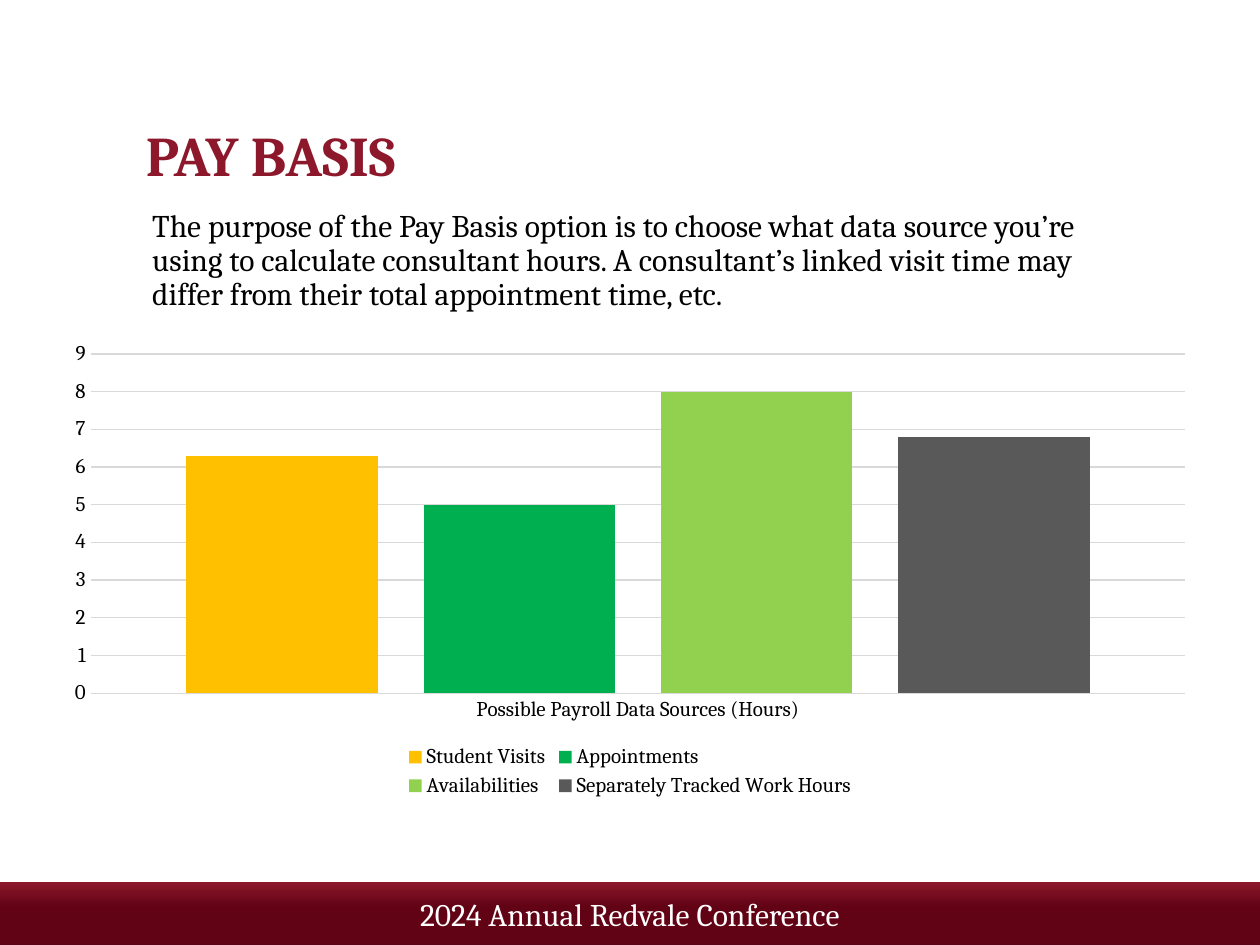
from dataclasses import dataclass

from pptx import Presentation
from pptx import util as u
from pptx.chart.data import CategoryChartData
from pptx.dml.color import RGBColor
from pptx.enum import chart as charts, shapes, text
from pptx.util import Cm


@dataclass(frozen=True)
class Theme:
    font: str = "Cambria"
    ink: str = "000000"
    white: str = "FFFFFF"
    crimson: str = "8D182B"
    maroon: str = "610215"
    grid: str = "D9D9D9"
    title_size: int = 32
    body_size: int = 18
    chart_size: int = 12


THEME = Theme()
SOURCES = [
    ("Student Visits", 6.3, "FFC000"),
    ("Appointments", 5, "00B050"),
    ("Availabilities", 8, "92D050"),
    ("Separately Tracked Work Hours", 6.8, "595959"),
]


def style_font(font, size, color, bold=False):
    font.name = THEME.font
    font.size = u.Pt(size)
    font.bold = bold
    font.color.rgb = RGBColor.from_string(color)


def add_text(page, words, left, top, width, height, *, size=THEME.body_size,
             color=THEME.ink, bold=False, align=text.PP_ALIGN.LEFT,
             anchor=text.MSO_ANCHOR.TOP, spacing=1.0, indent=0):
    box = page.shapes.add_textbox(Cm(left), Cm(top), Cm(width), Cm(height))
    frame = box.text_frame
    frame.word_wrap = True
    frame.vertical_anchor = anchor
    para = frame.paragraphs[0]
    para.alignment = align
    para.line_spacing = spacing
    if indent:
        para._p.get_or_add_pPr().set("marL", str(Cm(indent)))
    span = para.add_run()
    span.text = words
    style_font(span.font, size, color, bold)


def add_footer_band(page):
    band = page.shapes.add_shape(shapes.MSO_SHAPE.RECTANGLE,
                                 0, Cm(17.78), Cm(25.4), Cm(1.27))
    band.shadow.inherit = False
    band.line.fill.background()
    band.fill.gradient()
    band.fill.gradient_angle = 90
    stops = ((0.6, THEME.maroon), (1.0, THEME.crimson))
    for stop, (position, color) in zip(band.fill.gradient_stops, stops):
        stop.position = position
        stop.color.rgb = RGBColor.from_string(color)


def style_line(line, color):
    line.color.rgb = RGBColor.from_string(color)
    line.width = u.Pt(0.75)


def style_axes(chart):
    for axis in (chart.category_axis, chart.value_axis):
        axis.major_tick_mark = charts.XL_TICK_MARK.NONE
        axis.minor_tick_mark = charts.XL_TICK_MARK.NONE
        style_font(axis.tick_labels.font, THEME.chart_size, THEME.ink)
    style_line(chart.category_axis.format.line, THEME.grid)
    values = chart.value_axis
    values.minimum_scale, values.maximum_scale, values.major_unit = 0, 9, 1
    values.format.line.fill.background()
    values.has_major_gridlines = True
    style_line(values.major_gridlines.format.line, THEME.grid)


def add_hours_chart(page):
    data = CategoryChartData()
    data.categories = ["Possible Payroll Data Sources (Hours)"]
    for name, hours, _ in SOURCES:
        data.add_series(name, [hours])
    chart = page.shapes.add_chart(charts.XL_CHART_TYPE.COLUMN_CLUSTERED,
                                  Cm(1.04), Cm(6.71), Cm(23.32), Cm(9.47),
                                  data).chart
    style_font(chart.font, THEME.chart_size, THEME.ink)
    chart.has_title = False
    chart.has_legend = True
    chart.legend.position = charts.XL_LEGEND_POSITION.BOTTOM
    chart.legend.include_in_layout = False
    style_font(chart.legend.font, THEME.chart_size, THEME.ink)
    style_axes(chart)
    plot = chart.plots[0]
    plot.vary_by_categories = False
    plot.gap_width = 100
    plot.overlap = -24
    for series, (_, _, color) in zip(plot.series, SOURCES):
        series.format.fill.solid()
        series.format.fill.fore_color.rgb = RGBColor.from_string(color)


def main():
    deck = Presentation()
    deck.slide_width, deck.slide_height = Cm(25.4), Cm(19.05)
    page = deck.slides.add_slide(deck.slide_layouts[6])
    add_footer_band(page)
    add_text(page, "2024 Annual Redvale Conference", 6.35, 17.91, 12.7, 1.02,
             color=THEME.white, align=text.PP_ALIGN.CENTER)
    add_text(page, "PAY BASIS", 2.69, 2.13, 20.02, 1.8, size=THEME.title_size,
             color=THEME.crimson, bold=True, anchor=text.MSO_ANCHOR.BOTTOM,
             spacing=0.9)
    add_hours_chart(page)
    add_text(page, "The purpose of the Pay Basis option is to choose what data "
             "source you’re using to calculate consultant hours. A consultant’s "
             "linked visit time may differ from their total appointment time, etc.",
             2.69, 4.11, 20.02, 13.49, spacing=0.9, indent=0.13)
    deck.save("out.pptx")


if __name__ == "__main__":
    main()
